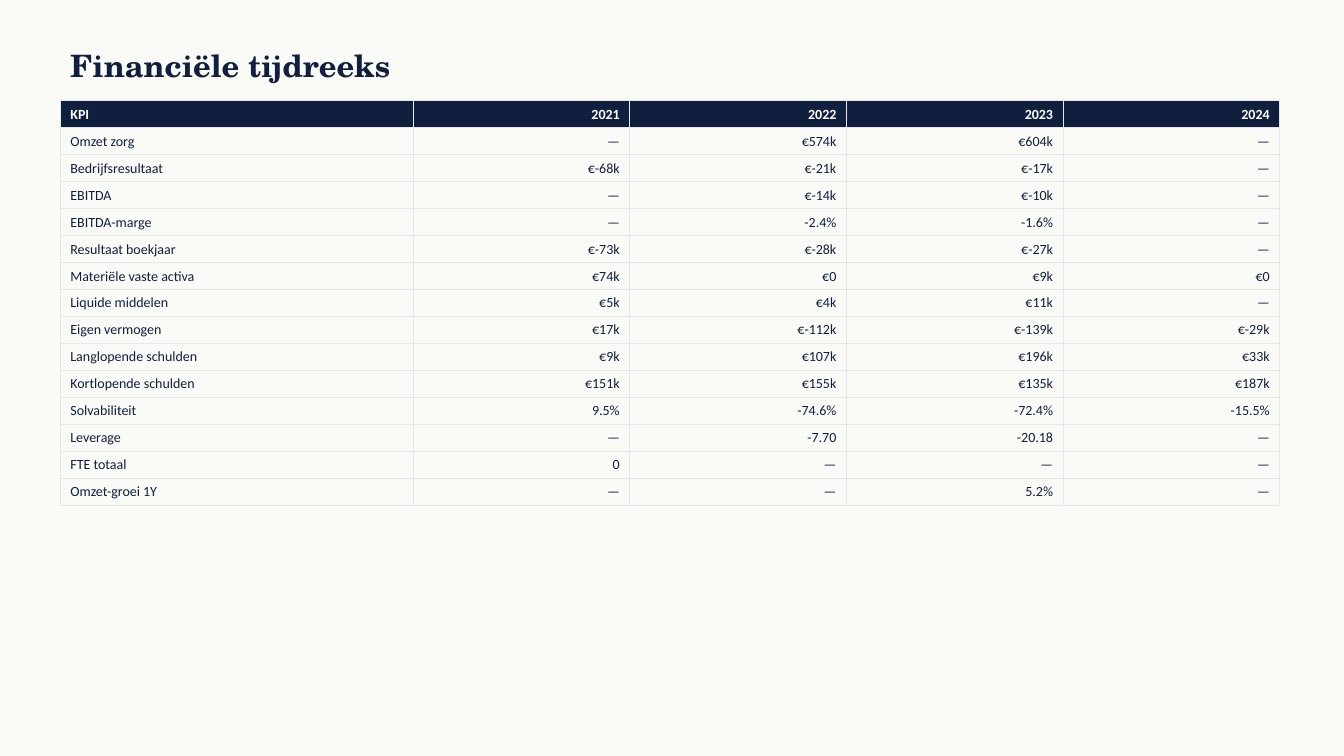
from dataclasses import dataclass

import pptx
import pptx.dml.color
import pptx.enum.text
import pptx.oxml
import pptx.oxml.ns
import pptx.util
from pptx.util import Cm

COLORS = {"navy": "0F1F3D", "paper": "FAFAF7", "white": "FFFFFF", "grid": "E5E7EB"}
LEFT = 1.52
COLUMN_WIDTHS = [8.89] + [5.46] * 4
ROW_HEIGHT = 0.68
BORDER_WIDTH = 0.5


@dataclass(frozen=True)
class TextStyle:
    font: str
    size: float
    color: str
    bold: bool = False


@dataclass(frozen=True)
class KpiRow:
    label: str
    values: tuple[str, str, str, str]


TITLE_STYLE = TextStyle("TeX Gyre Schola", 22, "navy", True)
HEADER_STYLE = TextStyle("Calibri", 10, "white", True)
BODY_STYLE = TextStyle("Calibri", 10, "navy")

KPI_ROWS = [
    KpiRow("KPI", ("2021", "2022", "2023", "2024")),
    KpiRow("Omzet zorg", ("—", "€574k", "€604k", "—")),
    KpiRow("Bedrijfsresultaat", ("€-68k", "€-21k", "€-17k", "—")),
    KpiRow("EBITDA", ("—", "€-14k", "€-10k", "—")),
    KpiRow("EBITDA-marge", ("—", "-2.4%", "-1.6%", "—")),
    KpiRow("Resultaat boekjaar", ("€-73k", "€-28k", "€-27k", "—")),
    KpiRow("Materiële vaste activa", ("€74k", "€0", "€9k", "€0")),
    KpiRow("Liquide middelen", ("€5k", "€4k", "€11k", "—")),
    KpiRow("Eigen vermogen", ("€17k", "€-112k", "€-139k", "€-29k")),
    KpiRow("Langlopende schulden", ("€9k", "€107k", "€196k", "€33k")),
    KpiRow("Kortlopende schulden", ("€151k", "€155k", "€135k", "€187k")),
    KpiRow("Solvabiliteit", ("9.5%", "-74.6%", "-72.4%", "-15.5%")),
    KpiRow("Leverage", ("—", "-7.70", "-20.18", "—")),
    KpiRow("FTE totaal", ("0", "—", "—", "—")),
    KpiRow("Omzet-groei 1Y", ("—", "—", "5.2%", "—")),
]


def rgb(name: str) -> pptx.dml.color.RGBColor:
    return pptx.dml.color.RGBColor.from_string(COLORS[name])


def add_run(paragraph, text: str, style: TextStyle) -> None:
    run = paragraph.add_run()
    run.text = text
    run.font.name = style.font
    run.font.size = pptx.util.Pt(style.size)
    run.font.bold = style.bold
    run.font.color.rgb = rgb(style.color)


def set_borders(cell) -> None:
    """Put the thin grid line on all four sides; borders precede the fill in the XML."""
    properties = cell._tc.get_or_add_tcPr()
    width = int(pptx.util.Pt(BORDER_WIDTH))
    for index, side in enumerate(("lnL", "lnR", "lnT", "lnB")):
        line = pptx.oxml.parse_xml(
            f'<a:{side} {pptx.oxml.ns.nsdecls("a")} w="{width}"><a:solidFill>'
            f'<a:srgbClr val="{COLORS["grid"]}"/></a:solidFill></a:{side}>'
        )
        properties.insert(index, line)


def add_title(slide, text: str) -> None:
    shape = slide.shapes.add_textbox(Cm(LEFT), Cm(1.02), Cm(30.48), Cm(1.27))
    frame = shape.text_frame
    frame.word_wrap = True
    frame.vertical_anchor = pptx.enum.text.MSO_ANCHOR.MIDDLE
    add_run(frame.paragraphs[0], text, TITLE_STYLE)


def fill_cell(cell, text: str, is_header: bool, is_value: bool) -> None:
    if is_header:
        cell.fill.solid()
        cell.fill.fore_color.rgb = rgb("navy")
    else:
        cell.fill.background()
    set_borders(cell)
    paragraph = cell.text_frame.paragraphs[0]
    if is_value:
        paragraph.alignment = pptx.enum.text.PP_ALIGN.RIGHT
    add_run(paragraph, text, HEADER_STYLE if is_header else BODY_STYLE)


def add_kpi_table(slide, kpi_rows: list[KpiRow]) -> None:
    table = slide.shapes.add_table(
        len(kpi_rows), len(COLUMN_WIDTHS), Cm(LEFT), Cm(2.54),
        Cm(sum(COLUMN_WIDTHS)), Cm(ROW_HEIGHT * len(kpi_rows)),
    ).table
    table.horz_banding = False
    for column, width in zip(table.columns, COLUMN_WIDTHS):
        column.width = Cm(width)
    for row_index, kpi_row in enumerate(kpi_rows):
        table.rows[row_index].height = Cm(ROW_HEIGHT)
        for column_index, text in enumerate((kpi_row.label, *kpi_row.values)):
            cell = table.cell(row_index, column_index)
            fill_cell(cell, text, row_index == 0, column_index > 0)


def main() -> None:
    presentation = pptx.Presentation()
    presentation.slide_width = Cm(33.87)
    presentation.slide_height = Cm(19.05)
    slide = presentation.slides.add_slide(presentation.slide_layouts[6])
    slide.background.fill.solid()
    slide.background.fill.fore_color.rgb = rgb("paper")
    add_title(slide, "Financiële tijdreeks")
    add_kpi_table(slide, KPI_ROWS)
    presentation.save("out.pptx")


if __name__ == "__main__":
    main()
